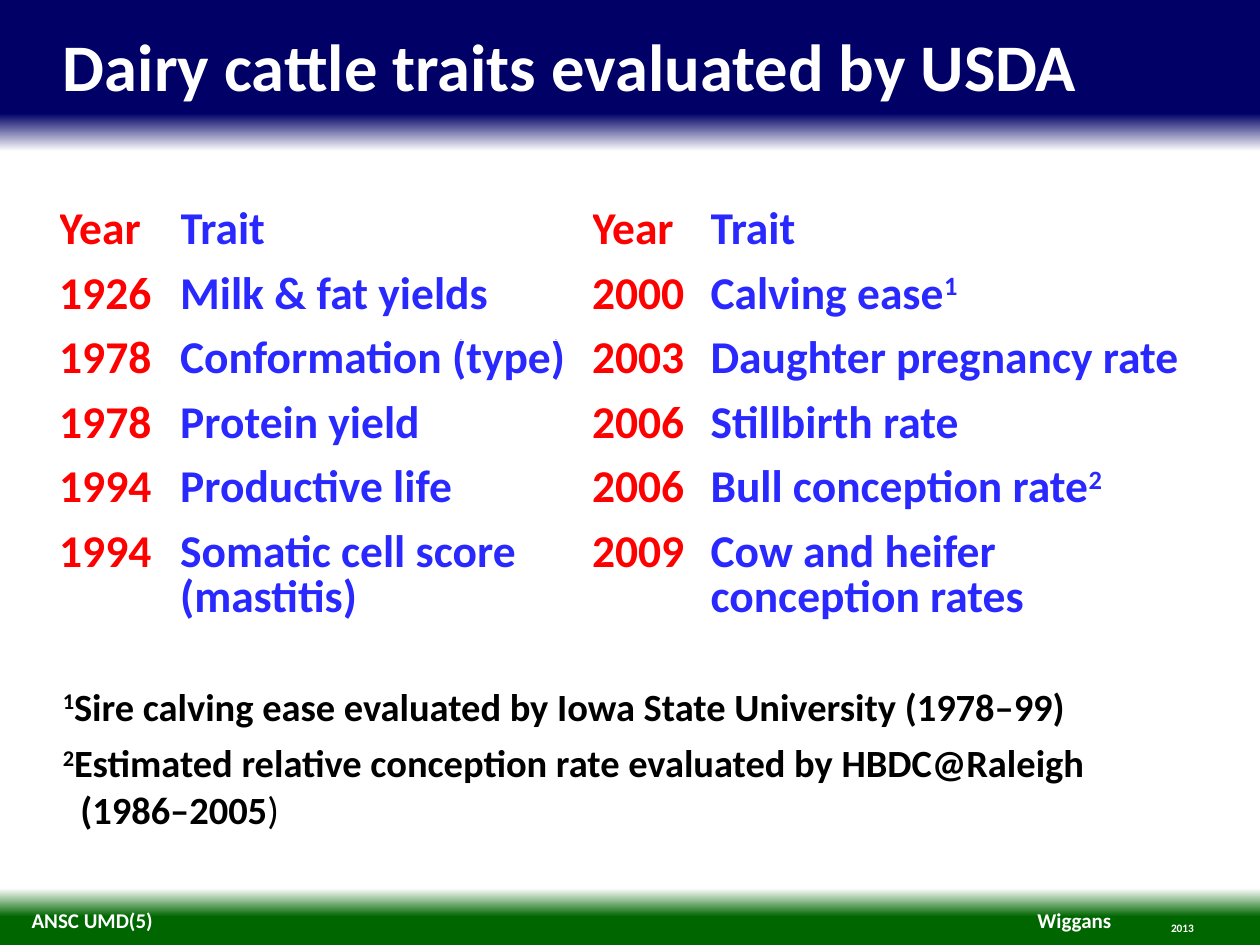
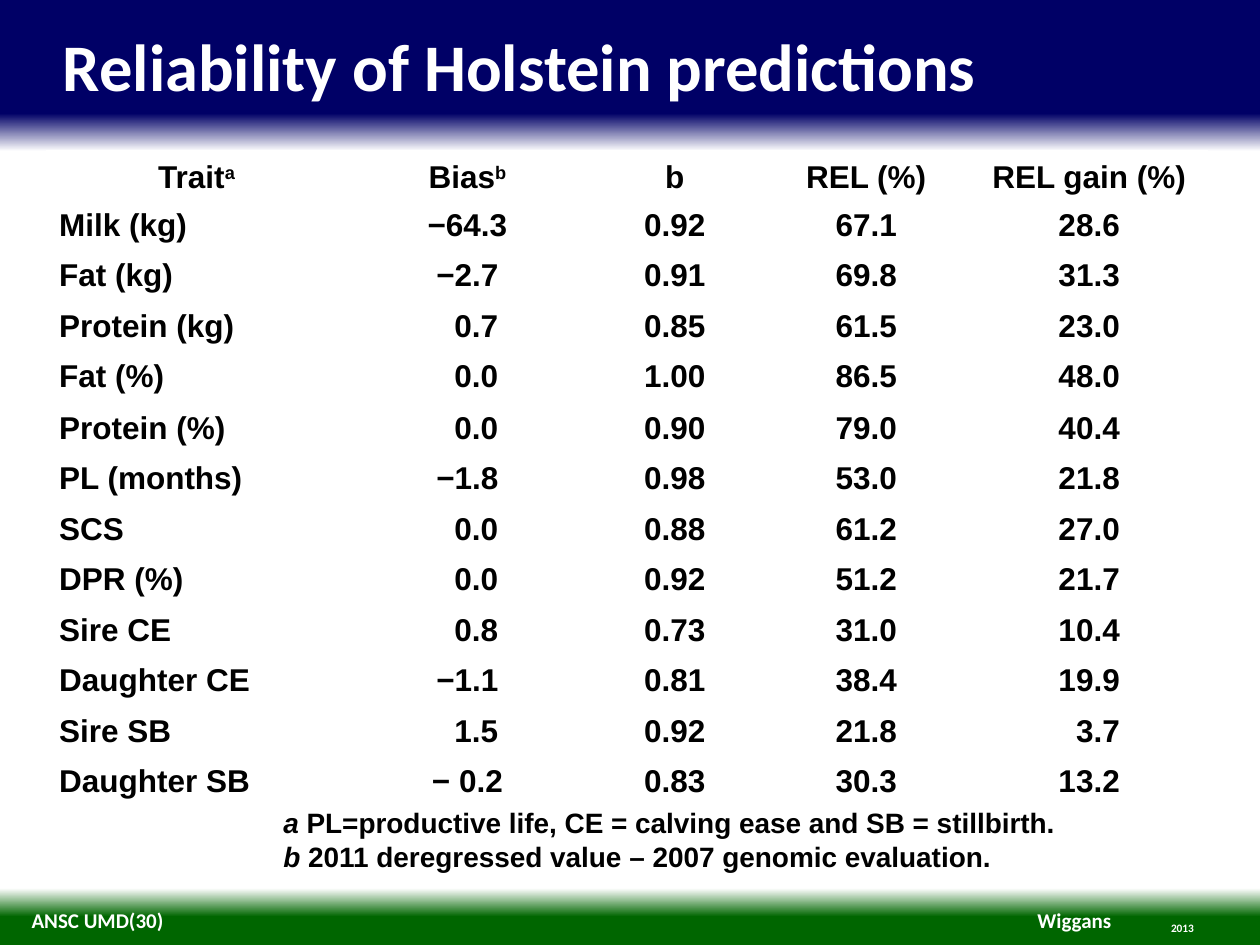
from lxml import etree
from pptx import Presentation
from pptx.dml.color import RGBColor
from pptx.enum.text import MSO_ANCHOR, PP_ALIGN
from pptx.oxml.ns import qn
from pptx.util import Inches, Pt

LEFT, CENTER, RIGHT = PP_ALIGN.LEFT, PP_ALIGN.CENTER, PP_ALIGN.RIGHT
TOP, MIDDLE, BOTTOM = MSO_ANCHOR.TOP, MSO_ANCHOR.MIDDLE, MSO_ANCHOR.BOTTOM

COLORS = {
    "navy": "000066",
    "green": "006600",
    "white": "FFFFFF",
    "black": "000000",
    "year": "FF0000",
    "trait": "2929FF",
}
BACKGROUND_STOPS = [
    (0, "navy"), (12, "navy"), (16, "white"),
    (94, "white"), (97, "green"), (100, "green"),
]
TWO_DIGIT_SHIFT = 0.14

TRAIT_HISTORY = [
    ("Year", "Trait", "Year", "Trait"),
    ("1926", "Milk & fat yields", "2000", [("Calving ease", ""), ("1", "super")]),
    ("1978", "Conformation (type)", "2003", "Daughter pregnancy rate"),
    ("1978", "Protein yield", "2006", "Stillbirth rate"),
    ("1994", "Productive life", "2006", [("Bull conception rate", ""), ("2", "super")]),
    ("1994", "Somatic cell score\n(mastitis)", "2009", "Cow and heifer conception rates"),
]
RELIABILITY_HEADER = [
    [("Trait", ""), ("a", "super")], [("Bias", ""), ("b", "super")],
    "b", "REL (%)", "REL gain (%)",
]
RELIABILITY = [
    ("Milk (kg)", "−64.3", "0.92", "67.1", "28.6"),
    ("Fat (kg)", "−2.7", "0.91", "69.8", "31.3"),
    ("Protein (kg)", "0.7", "0.85", "61.5", "23.0"),
    ("Fat (%)", "0.0", "1.00", "86.5", "48.0"),
    ("Protein (%)", "0.0", "0.90", "79.0", "40.4"),
    ("PL (months)", "−1.8", "0.98", "53.0", "21.8"),
    ("SCS", "0.0", "0.88", "61.2", "27.0"),
    ("DPR (%)", "0.0", "0.92", "51.2", "21.7"),
    ("Sire CE", "0.8", "0.73", "31.0", "10.4"),
    ("Daughter CE", "−1.1", "0.81", "38.4", "19.9"),
    ("Sire SB", "1.5", "0.92", "21.8", "3.7"),
    ("Daughter SB", "− 0.2", "0.83", "30.3", "13.2"),
]


class Deck:
    """Holds the lecture style and the slide being filled."""

    def __init__(self):
        self.presentation = Presentation()
        self.presentation.slide_width = Inches(10)
        self.presentation.slide_height = Inches(7.5)
        self.slide = None

    def new_slide(self, title, number):
        layout = self.presentation.slide_layouts[6]
        self.slide = self.presentation.slides.add_slide(layout)
        self.background()
        footer = dict(color="white", anchor=MIDDLE, inset=False)
        self.text((8.23, 7.2, 0.59, 0.2), ["Wiggans"], 12, align=RIGHT, wrap=False, **footer)
        self.text((0.25, 7.2, 5.22, 0.2), [f"ANSC UMD({number})"], 12, **footer)
        self.text((9.08, 7.31, 0.61, 0.11), ["2013"], 6.5, align=CENTER, **footer)
        self.text((0.5, 0.2, 9, 0.64), [title], 38, color="white", inset=False)

    def background(self):
        fill = self.slide.background.fill
        fill.gradient()
        fill.gradient_angle = 270
        stops = next(self.slide.element.iter(qn("a:gsLst")))
        for stop in list(stops):
            stops.remove(stop)
        for percent, color in BACKGROUND_STOPS:
            stop = etree.SubElement(stops, qn("a:gs"), pos=str(percent * 1000))
            etree.SubElement(stop, qn("a:srgbClr"), val=COLORS[color])

    def paragraph(self, paragraph, content, size, color, font, align=LEFT, indent=0):
        paragraph.alignment = align
        if indent:
            paragraph._p.get_or_add_pPr().set("marL", str(Inches(indent)))
        parts = [(content, "")] if isinstance(content, str) else content
        for words, mark in parts:
            run = paragraph.add_run()
            run.text = words
            run.font.name = font
            run.font.size = Pt(size)
            run.font.bold = mark != "plain"
            run.font.color.rgb = RGBColor.from_string(COLORS[color])
            if mark == "italic":
                run.font.italic = True
            if mark == "super":
                run.font._element.set("baseline", "30000")

    def text(self, box, contents, size, color="black", font="Calibri", align=LEFT,
             anchor=TOP, inset=True, wrap=True):
        frame = self.slide.shapes.add_textbox(*map(Inches, box)).text_frame
        frame.word_wrap = wrap
        frame.vertical_anchor = anchor
        if not inset:
            frame.margin_left = frame.margin_top = frame.margin_right = frame.margin_bottom = 0
        for index, content in enumerate(contents):
            line = frame.add_paragraph() if index else frame.paragraphs[0]
            self.paragraph(line, content, size, color, font, align)
        return frame.paragraphs

    def table(self, left, top, widths, heights):
        box = map(Inches, (left, top, sum(widths), sum(heights)))
        table = self.slide.shapes.add_table(len(heights), len(widths), *box).table
        table.first_row = table.horz_banding = False
        for column, width in zip(table.columns, widths):
            column.width = Inches(width)
        for row, height in zip(table.rows, heights):
            row.height = Inches(height)
        for cell in table.iter_cells():
            cell.fill.background()
        return table

    def trait_history(self):
        table = self.table(0.47, 1.68, [0.96, 3.27, 0.94, 3.84], [0.51] * 5 + [0.87])
        for r, entries in enumerate(TRAIT_HISTORY):
            for c, entry in enumerate(entries):
                cell = table.cell(r, c)
                cell.margin_left = cell.margin_top = cell.margin_right = 0
                cell.margin_bottom = Inches(0.15)
                lines = entry.split("\n") if isinstance(entry, str) else [entry]
                for index, line in enumerate(lines):
                    frame = cell.text_frame
                    paragraph = frame.add_paragraph() if index else frame.paragraphs[0]
                    paragraph.line_spacing = Pt(26)
                    color = "trait" if c % 2 else "year"
                    self.paragraph(paragraph, line, 26, color, "Calibri")

    def reliability(self):
        heights = [0.38] * (len(RELIABILITY) + 1)
        heights[4] = 0.41
        table = self.table(0.37, 1.2, [2.38, 1.92, 1.37, 1.67, 1.87], heights)
        for r, entries in enumerate([RELIABILITY_HEADER] + RELIABILITY):
            for c, entry in enumerate(entries):
                cell = table.cell(r, c)
                cell.vertical_anchor = TOP if r else BOTTOM
                align = LEFT if r and c == 0 else CENTER
                unsigned = c in (1, 4) and len(entry) == 3
                indent = TWO_DIGIT_SHIFT if r and unsigned else 0
                self.paragraph(cell.text_frame.paragraphs[0], entry, 18, "black",
                               "Arial", align, indent)


def main():
    deck = Deck()

    deck.new_slide("Dairy cattle traits evaluated by USDA", 5)
    deck.trait_history()
    calving, conception, years = deck.text((0.4, 5.37, 8.97, 1.3), [
        [("1", "super"), ("Sire calving ease evaluated by Iowa State University (1978–99)", "")],
        [("2", "super"), ("Estimated relative conception rate evaluated by HBDC@Raleigh", "")],
        [("(1986–2005", ""), (")", "plain")],
    ], 22)
    calving.space_after = years.space_after = Pt(6)
    years._p.get_or_add_pPr().set("marL", str(Inches(0.14)))

    deck.new_slide("Reliability of Holstein predictions", 30)
    deck.reliability()
    deck.text((2.15, 6.34, 6.42, 0.64), [
        [("a ", "italic"), ("PL=productive life, CE = calving ease and SB = stillbirth.", "")],
        [("b ", "italic"), ("2011 deregressed value – 2007 genomic evaluation.", "")],
    ], 16, font="Arial", anchor=MIDDLE, wrap=False)

    deck.presentation.save("out.pptx")


if __name__ == "__main__":
    main()
